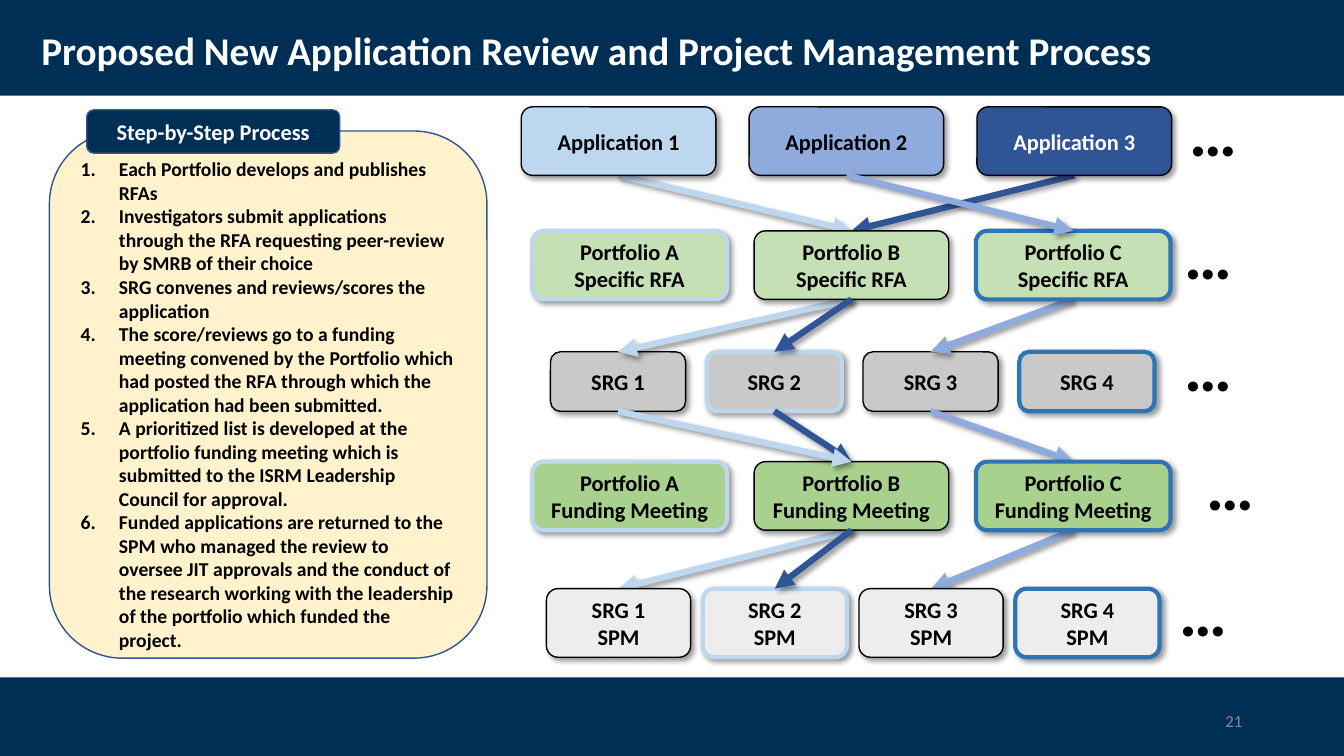
from lxml import etree
from pptx import Presentation
from pptx.dml.color import RGBColor
from pptx.enum import shapes, text
from pptx.oxml import ns
from pptx.util import Inches, Pt

NAVY = RGBColor(0x00, 0x2F, 0x56)
WHITE = RGBColor(0xFF, 0xFF, 0xFF)
BLACK = RGBColor(0x00, 0x00, 0x00)
GRAY = RGBColor(0x8C, 0x8C, 0x8C)
CREAM = RGBColor(0xFF, 0xF2, 0xCC)
OUTLINE = RGBColor(0x32, 0x54, 0x91)
PALE_BLUE = RGBColor(0xBD, 0xD7, 0xEE)
MID_BLUE = RGBColor(0x8F, 0xAA, 0xDC)
DARK_BLUE = RGBColor(0x2F, 0x55, 0x97)
BRIGHT_BLUE = RGBColor(0x2E, 0x75, 0xB6)
LIGHT_GREEN = RGBColor(0xC5, 0xE0, 0xB4)
GREEN = RGBColor(0xA9, 0xD1, 0x8E)
SILVER = RGBColor(0xC9, 0xC9, 0xC9)
PALE_GRAY = RGBColor(0xED, 0xED, 0xED)

STEPS = [
    "Each Portfolio develops and publishes RFAs",
    "Investigators submit applications through the RFA requesting peer-review by SMRB of their choice",
    "SRG convenes and reviews/scores the application",
    "The score/reviews go to a funding meeting convened by the Portfolio which had posted "
    "the RFA through which the application had been submitted.",
    "A prioritized list is developed at the portfolio funding meeting which is submitted "
    "to the ISRM Leadership Council for approval.",
    "Funded applications are returned to the SPM who managed the review to oversee JIT approvals "
    "and the conduct of the research working with the leadership of the portfolio which funded the project.",
]

PORTFOLIO_LINES = [PALE_BLUE, BLACK, BRIGHT_BLUE]
SRG_LINES = [BLACK, PALE_BLUE, BLACK, BRIGHT_BLUE]

# Rows from back to front: left, top, pitch, width, height, fills, lines, labels, ellipsis place
ROWS = {
    "srg": (0.29, 2.43, 1.55, 1.34, 0.59, [SILVER] * 4, SRG_LINES,
            [f"SRG {n}" for n in range(1, 5)], (6.48, 2.11)),
    "rfa": (0.11, 1.23, 2.2, 1.93, 0.68, [LIGHT_GREEN] * 3, PORTFOLIO_LINES,
            [f"Portfolio {p} Specific RFA" for p in "ABC"], (6.48, 1.0)),
    "meeting": (0.11, 3.52, 2.2, 1.93, 0.68, [GREEN] * 3, PORTFOLIO_LINES,
                [f"Portfolio {p} Funding Meeting" for p in "ABC"], (6.7, 3.29)),
    "spm": (0.25, 4.78, 1.55, 1.43, 0.68, [PALE_GRAY] * 4, SRG_LINES,
            [f"SRG {n}\nSPM" for n in range(1, 5)], (6.43, 4.54)),
    "application": (0, 0, 2.26, 1.93, 0.68, [PALE_BLUE, MID_BLUE, DARK_BLUE], [BLACK] * 3,
                    [f"Application {n}" for n in range(1, 4)], (6.53, -0.22)),
}

# Row and index of both ends, colour, whether the arrow lies over the boxes
ARROWS = [
    ("application", 2, "rfa", 1, DARK_BLUE, False),
    ("application", 0, "rfa", 1, PALE_BLUE, False),
    ("rfa", 1, "srg", 0, PALE_BLUE, False),
    ("srg", 1, "meeting", 1, DARK_BLUE, False),
    ("rfa", 2, "srg", 2, MID_BLUE, False),
    ("srg", 2, "meeting", 2, MID_BLUE, False),
    ("meeting", 2, "spm", 2, MID_BLUE, False),
    ("meeting", 1, "spm", 0, PALE_BLUE, False),
    ("srg", 0, "meeting", 1, PALE_BLUE, True),
    ("meeting", 1, "spm", 1, DARK_BLUE, True),
    ("rfa", 1, "srg", 1, DARK_BLUE, True),
    ("application", 1, "rfa", 2, MID_BLUE, True),
]


def format_text(frame, size, color, bold=True, align=None):
    for paragraph in frame.paragraphs:
        paragraph.alignment = align
        for run in paragraph.runs:
            font = run.font
            font.name, font.size, font.bold = "Calibri", Pt(size), bold
            font.color.rgb = color


def add_box(slide, kind, left, top, width, height, fill, line=None, line_width=1):
    shape = slide.shapes.add_shape(kind, Inches(left), Inches(top), Inches(width), Inches(height))
    shape.shadow.inherit = False
    shape.fill.solid()
    shape.fill.fore_color.rgb = fill
    if line is None:
        shape.line.fill.background()
    else:
        shape.line.color.rgb = line
        shape.line.width = Pt(line_width)
    return shape


def add_label_box(slide, label, left, top, width, height, fill, line, line_width, color):
    box = add_box(slide, shapes.MSO_SHAPE.ROUNDED_RECTANGLE, left, top, width, height,
                  fill, line, line_width)
    box.text_frame.text = label
    box.text_frame.vertical_anchor = text.MSO_ANCHOR.MIDDLE
    format_text(box.text_frame, 16, color, align=text.PP_ALIGN.CENTER)
    return box


def add_text(slide, label, left, top, width, height, size, color, bold=True, align=None):
    box = slide.shapes.add_textbox(Inches(left), Inches(top), Inches(width), Inches(height))
    box.text_frame.text = label
    format_text(box.text_frame, size, color, bold, align)
    return box


def place(shape, left, top, width, height):
    shape.left, shape.top = Inches(left), Inches(top)
    shape.width, shape.height = Inches(width), Inches(height)


def send_to_back(slide, shape):
    slide.shapes.title._element.addprevious(shape._element)


def add_shadow(shape):
    properties = shape._element.spPr
    effects = properties.find(ns.qn("a:effectLst"))
    if effects is None:
        effects = etree.SubElement(properties, ns.qn("a:effectLst"))
    shadow = etree.SubElement(effects, ns.qn("a:outerShdw"), blurRad=str(Pt(4)),
                              dist=str(Pt(3)), dir="2700000", algn="tl", rotWithShape="0")
    color = etree.SubElement(shadow, ns.qn("a:srgbClr"), val=str(BLACK))
    etree.SubElement(color, ns.qn("a:alpha"), val="40000")


def add_arrow(slide, start, end, color):
    arrow = slide.shapes.add_connector(shapes.MSO_CONNECTOR.STRAIGHT, 0, 0, 0, 0)
    arrow.begin_connect(start, 2)
    arrow.end_connect(end, 0)
    arrow.line.color.rgb = color
    arrow.line.width = Pt(4.5)
    etree.SubElement(arrow.line._get_or_add_ln(), ns.qn("a:tailEnd"), type="triangle")
    add_shadow(arrow)
    return arrow


def build_frame(slide, width):
    # Header and footer bands
    for top, height in ((0, 0.95), (6.72, 0.8)):
        send_to_back(slide, add_box(slide, shapes.MSO_SHAPE.RECTANGLE, 0, top, width, height, NAVY))
    # Title
    title = slide.shapes.title
    place(title, 0.31, 0.18, 11.5, 0.68)
    title.text_frame.text = "Proposed New Application Review and Project Management Process"
    title.text_frame.vertical_anchor = text.MSO_ANCHOR.MIDDLE
    title.text_frame.auto_size = text.MSO_AUTO_SIZE.NONE
    title.text_frame.paragraphs[0].line_spacing = 0.9
    format_text(title.text_frame, 28, WHITE, align=text.PP_ALIGN.LEFT)
    # Slide number
    number = add_text(slide, "21", width - 3.91, 6.95, 3, 0.4, 12, GRAY, False, text.PP_ALIGN.RIGHT)
    number.text_frame.vertical_anchor = text.MSO_ANCHOR.MIDDLE


def build_steps(slide, left, top, width, height):
    # Panel
    panel = add_box(slide, shapes.MSO_SHAPE.ROUNDED_RECTANGLE, left, top, width, height, CREAM, OUTLINE)
    send_to_back(slide, panel)
    # Numbered list
    body = slide.placeholders[1]
    place(body, left + 0.21, top + 0.21, width - 0.42, height - 0.42)
    frame = body.text_frame
    frame.text = "\n".join(STEPS)
    frame.auto_size = text.MSO_AUTO_SIZE.NONE
    for paragraph in frame.paragraphs:
        paragraph.space_before = Pt(0)
        properties = paragraph._p.get_or_add_pPr()
        properties.set("marL", str(Inches(0.38)))
        properties.set("indent", str(-Inches(0.38)))
        etree.SubElement(properties, ns.qn("a:buFont"), typeface="+mj-lt")
        etree.SubElement(properties, ns.qn("a:buAutoNum"), type="arabicPeriod")
    format_text(frame, 14, BLACK, align=text.PP_ALIGN.LEFT)
    # Heading tab
    add_label_box(slide, "Step-by-Step Process", left + 0.37, top - 0.21, 2.51, 0.43,
                  NAVY, OUTLINE, 1, WHITE)


def build_flow(slide, left, top):
    # Rows of boxes, each with its ellipsis
    boxes = {}
    for name, (x, y, pitch, width, height, fills, lines, labels, dots) in ROWS.items():
        boxes[name] = []
        for index, (fill, line, label) in enumerate(zip(fills, lines, labels)):
            box = add_label_box(slide, label, left + x + index * pitch, top + y, width, height,
                                fill, line, 1 if line == BLACK else 3,
                                WHITE if fill == DARK_BLUE else BLACK)
            add_shadow(box)
            boxes[name].append(box)
        add_text(slide, "…", left + dots[0], top + dots[1], 0.68, 0.91, 48, BLACK)
    # Arrows
    for start_row, start, end_row, end, color, in_front in ARROWS:
        arrow = add_arrow(slide, boxes[start_row][start], boxes[end_row][end], color)
        if not in_front:
            boxes["rfa"][0]._element.addprevious(arrow._element)


def main():
    presentation = Presentation()
    presentation.slide_width, presentation.slide_height = Inches(13.33), Inches(7.5)
    slide = presentation.slides.add_slide(presentation.slide_layouts[1])
    build_frame(slide, 13.33)
    build_steps(slide, 0.49, 1.3, 4.34, 5.23)
    build_flow(slide, 5.17, 1.06)
    presentation.save("out.pptx")


if __name__ == "__main__":
    main()
